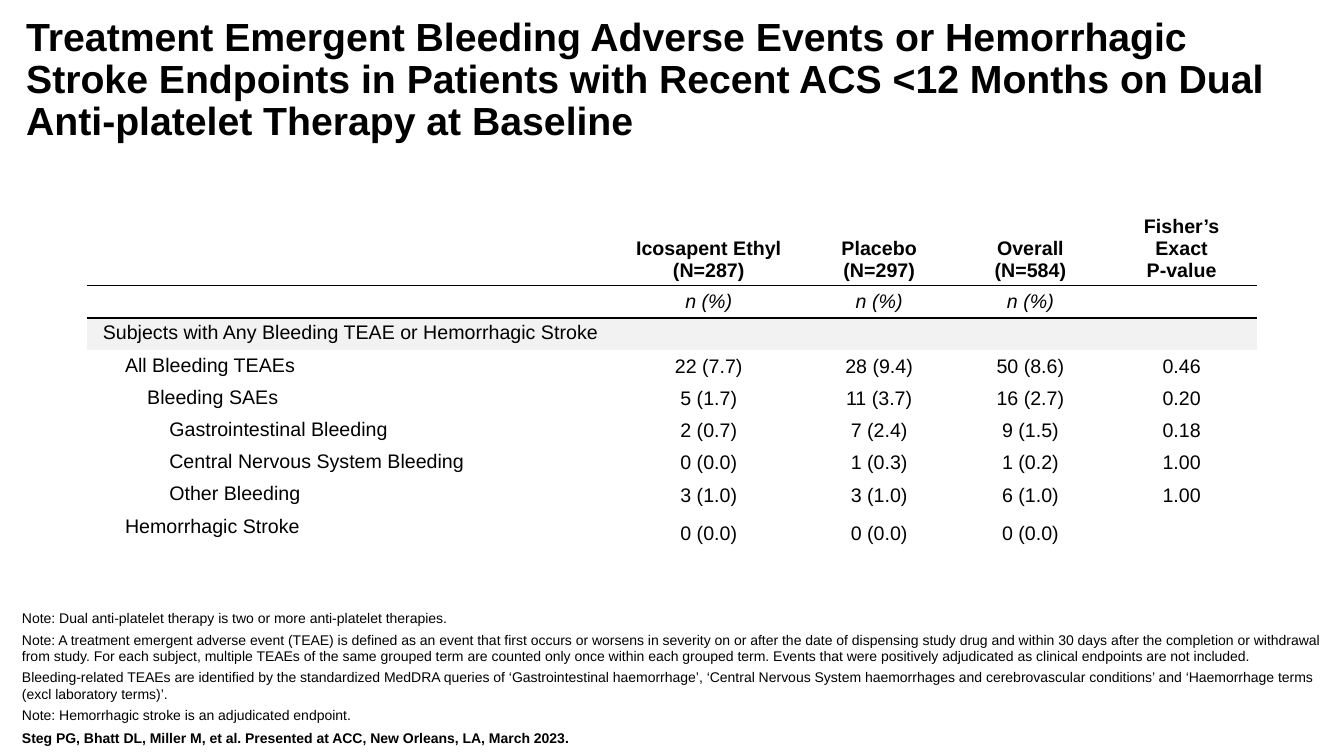
from dataclasses import dataclass

from lxml import etree
from pptx import Presentation
from pptx import util as u
from pptx.dml.color import RGBColor
from pptx.enum import text as t
from pptx.oxml import ns

HUES = {"ink": "000000", "band": "F2F2F2"}
FACE = "Arial"
PLAIN = "{2D5ABB26-0587-4C30-8999-92F81FD0307C}"  # table style without grid
WIDTHS = (5.23, 1.88, 1.5, 1.5, 1.5)
HEAD, BODY, LAST = 0.54, 0.32, 0.44  # row heights
PAD, STEP = 0.16, 0.22  # label margin and indent per level


@dataclass
class Row:
    label: str
    values: tuple[str, ...] = ("",) * 4
    level: int = 0
    height: float = BODY
    bold: bool = False
    italic: bool = False
    rule: bool = False
    band: bool = False


@dataclass
class Note:
    words: str
    gap: float = 3
    bold: bool = False


TITLE = ("Treatment Emergent Bleeding Adverse Events or Hemorrhagic Stroke "
         "Endpoints in Patients with Recent ACS <12 Months on Dual "
         "Anti-platelet Therapy at Baseline")

ROWS = [
    Row("", ("Icosapent Ethyl\n(N=287)", "Placebo\n(N=297)", "Overall\n(N=584)",
             "Fisher’s Exact\nP-value"), height=HEAD, bold=True, rule=True),
    Row("", ("n (%)", "n (%)", "n (%)", ""), italic=True, rule=True),
    Row("Subjects with Any Bleeding TEAE or Hemorrhagic Stroke", band=True),
    Row("All Bleeding TEAEs", ("22 (7.7)", "28 (9.4)", "50 (8.6)", "0.46"), 1),
    Row("Bleeding SAEs", ("5 (1.7)", "11 (3.7)", "16 (2.7)", "0.20"), 2),
    Row("Gastrointestinal Bleeding", ("2 (0.7)", "7 (2.4)", "9 (1.5)", "0.18"), 3),
    Row("Central Nervous System Bleeding", ("0 (0.0)", "1 (0.3)", "1 (0.2)", "1.00"), 3),
    Row("Other Bleeding", ("3 (1.0)", "3 (1.0)", "6 (1.0)", "1.00"), 3),
    Row("Hemorrhagic Stroke", ("0 (0.0)", "0 (0.0)", "0 (0.0)", ""), 1, LAST),
]

NOTES = [
    Note("Note: Dual anti-platelet therapy is two or more anti-platelet therapies.", 0),
    Note("Note: A treatment emergent adverse event (TEAE) is defined as an event that "
         "first occurs or worsens in severity on or after the date of dispensing study "
         "drug and within 30 days after the completion or withdrawal from study. For "
         "each subject, multiple TEAEs of the same grouped term are counted only once "
         "within each grouped term. Events that were positively adjudicated as clinical "
         "endpoints are not included."),
    Note("Bleeding-related TEAEs are identified by the standardized MedDRA queries of "
         "‘Gastrointestinal haemorrhage’, ‘Central Nervous System haemorrhages and "
         "cerebrovascular conditions’ and ‘Haemorrhage terms (excl laboratory terms)’."),
    Note("Note: Hemorrhagic stroke is an adjudicated endpoint."),
    Note("Steg PG, Bhatt DL, Miller M, et al. Presented at ACC, New Orleans, LA, "
         "March 2023.", 4, True),
]


def style(par, size: float, bold: bool = False, italic: bool = False) -> None:
    font = par.font
    font.name, font.size = FACE, u.Pt(size)
    font.bold, font.italic = bold, italic
    font.color.rgb = RGBColor.from_string(HUES["ink"])


def place(shape, left: float, top: float, width: float, height: float) -> None:
    shape.left, shape.top = u.Inches(left), u.Inches(top)
    shape.width, shape.height = u.Inches(width), u.Inches(height)


def border(cell, side: str) -> None:
    line = etree.Element(ns.qn(f"a:{side}"), w=str(u.Pt(1)))
    fill = etree.SubElement(line, ns.qn("a:solidFill"))
    etree.SubElement(fill, ns.qn("a:srgbClr"), val=HUES["ink"])
    cell._tc.get_or_add_tcPr().insert(0, line)


def draw_cell(cell, row: Row, col: int) -> None:
    cell.text = ((row.label,) + row.values)[col]
    cell.margin_top = cell.margin_bottom = u.Inches(0.04)
    cell.vertical_anchor = t.MSO_ANCHOR.MIDDLE
    if row.bold:
        cell.vertical_anchor = t.MSO_ANCHOR.BOTTOM
    elif col == 0:
        cell.vertical_anchor = t.MSO_ANCHOR.TOP
        cell.margin_left = u.Inches(PAD + STEP * row.level)
    for par in cell.text_frame.paragraphs:
        par.alignment = t.PP_ALIGN.CENTER if col else t.PP_ALIGN.LEFT
        style(par, 14, row.bold, row.italic)
    if row.band:
        cell.fill.solid()
        cell.fill.fore_color.rgb = RGBColor.from_string(HUES["band"])
    else:
        cell.fill.background()
    if row.rule:
        border(cell, "lnB")


def draw_table(slide) -> None:
    frame = slide.shapes.add_table(
        len(ROWS), len(WIDTHS), u.Inches(0.86), u.Inches(2.1),
        u.Inches(sum(WIDTHS)), u.Inches(sum(row.height for row in ROWS)))
    table = frame.table
    table.first_row = table.horz_banding = False
    table._tbl.tblPr.find(ns.qn("a:tableStyleId")).text = PLAIN
    for col, width in enumerate(WIDTHS):
        table.columns[col].width = u.Inches(width)
    for num, row in enumerate(ROWS):
        table.rows[num].height = u.Inches(row.height)
        for col in range(len(WIDTHS)):
            draw_cell(table.cell(num, col), row, col)


def draw_title(slide) -> None:
    title = slide.shapes.title
    place(title, 0.16, 0.12, 12.81, 1.46)
    frame = title.text_frame
    frame.text = TITLE
    frame.auto_size = t.MSO_AUTO_SIZE.NONE
    frame.vertical_anchor = t.MSO_ANCHOR.TOP
    par = frame.paragraphs[0]
    par.alignment, par.line_spacing = t.PP_ALIGN.LEFT, 0.9
    style(par, 28, True)


def draw_notes(slide) -> None:
    box = slide.shapes.add_textbox(0, 0, 0, 0)
    place(box, 0.12, 5.99, 13.14, 1.46)
    frame = box.text_frame
    frame.word_wrap = True
    frame.vertical_anchor = t.MSO_ANCHOR.BOTTOM
    frame.text = "\n".join(note.words for note in NOTES)
    for par, note in zip(frame.paragraphs, NOTES):
        par.space_before = u.Pt(note.gap)
        style(par, 10, note.bold)


def main() -> None:
    deck = Presentation()
    deck.slide_width, deck.slide_height = u.Inches(13.33), u.Inches(7.5)
    slide = deck.slides.add_slide(deck.slide_layouts[5])
    draw_title(slide)
    draw_table(slide)
    draw_notes(slide)
    deck.save("out.pptx")


if __name__ == "__main__":
    main()
